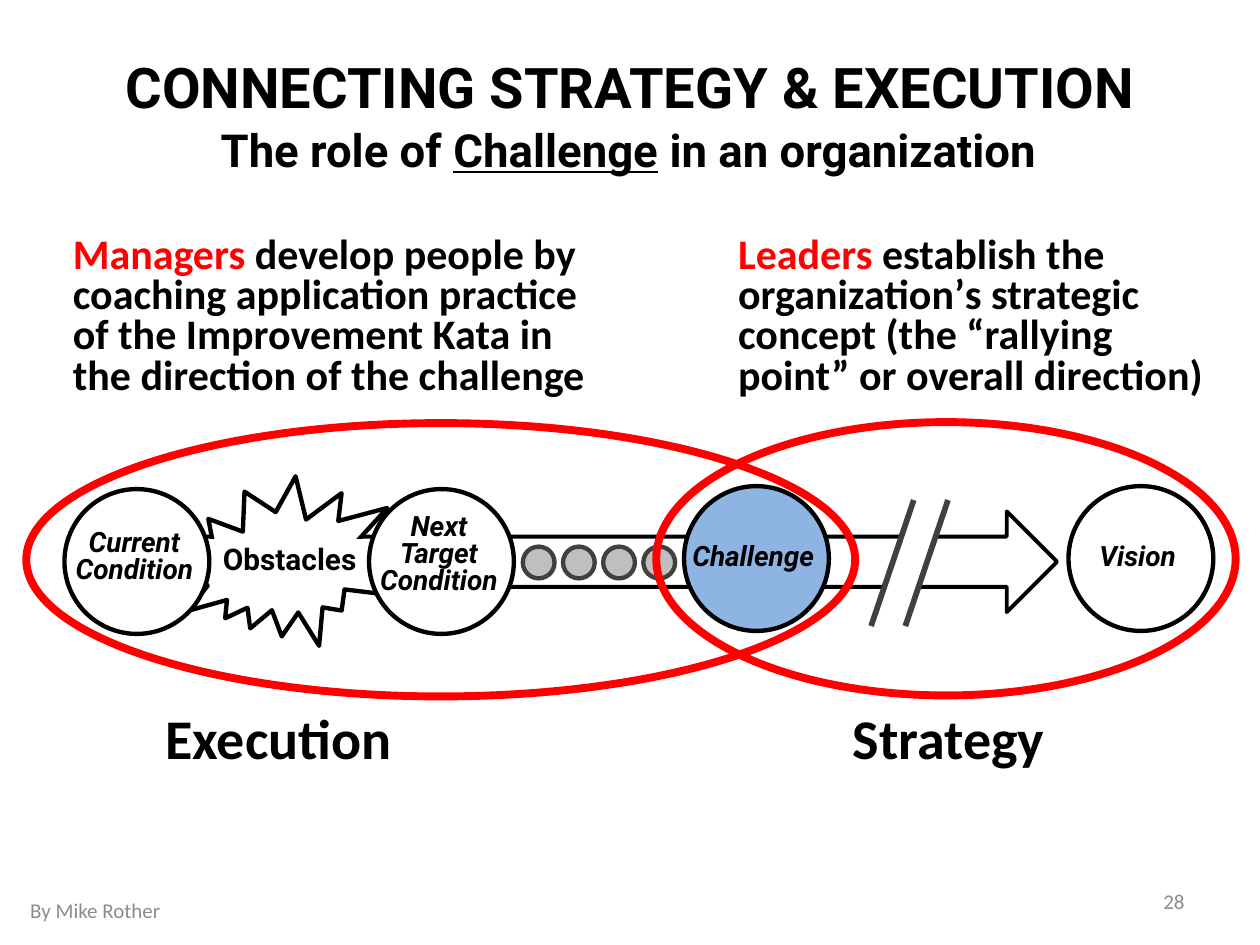
from dataclasses import dataclass

from lxml import etree
from pptx import Presentation
from pptx.dml.color import RGBColor
from pptx.enum.shapes import MSO_CONNECTOR, MSO_SHAPE
from pptx.enum.text import MSO_ANCHOR, MSO_AUTO_SIZE, PP_ALIGN
from pptx.oxml.ns import qn
from pptx.util import Cm, Pt

LEFT, MID, RIGHT = PP_ALIGN.LEFT, PP_ALIGN.CENTER, PP_ALIGN.RIGHT
TOP, CENTER = MSO_ANCHOR.TOP, MSO_ANCHOR.MIDDLE
OVAL, RECT = MSO_SHAPE.OVAL, MSO_SHAPE.RECTANGLE
ARROW, BURST = MSO_SHAPE.RIGHT_ARROW, MSO_SHAPE.EXPLOSION2
STRAIGHT = MSO_CONNECTOR.STRAIGHT


@dataclass(frozen=True)
class Theme:
    head: str = "Roboto"
    body: str = "Calibri"
    black: str = "000000"
    white: str = "FFFFFF"
    red: str = "FF0000"
    blue: str = "8EB4E3"
    gray: str = "BFBFBF"
    dark: str = "404040"
    pale: str = "8C8C8C"
    big: int = 32
    sub: int = 26
    text: int = 24
    tag: int = 17
    label: int = 16
    foot: int = 12
    thin: float = 2.25
    line: float = 2.5
    slash: float = 3.25
    ring: float = 4.5


T = Theme()


@dataclass(frozen=True)
class Box:
    x: float
    y: float
    w: float
    h: float


@dataclass(frozen=True)
class Style:
    font: str
    size: int
    color: str = T.black
    bold: bool = True
    italic: bool = False
    align: PP_ALIGN = MID
    anchor: MSO_ANCHOR = TOP
    space: float = 1.0
    wrap: bool = True


@dataclass(frozen=True)
class Stage:
    x: float
    y: float
    words: str
    label: Box
    fill: str = T.white


LABEL = Style(T.head, T.label, italic=True, space=0.8)
HEAD = Style(T.head, T.big, space=0.9)
SUB = Style(T.head, T.sub)
TAG = Style(T.head, T.tag, wrap=False)
NAME = Style(T.body, T.big)
NOTE = Style(T.body, T.text, align=LEFT, space=0.8)
FOOT = Style(T.body, T.foot, T.pale, bold=False, align=LEFT, anchor=CENTER)
PAGE = Style(T.body, T.foot, T.pale, bold=False, align=RIGHT, anchor=CENTER)

DISK = 2.92
VISION = Stage(21.54, 9.8, "Vision", Box(21.21, 10.87, 3.45, 0.84))
NEXT = Stage(7.44, 9.86, "Next\nTarget\nCondition", Box(7.26, 10.26, 3.18, 1.93))
NOW = Stage(1.3, 9.86, "Current\nCondition", Box(1.12, 10.59, 3.18, 1.37))
GOAL = Stage(13.79, 9.8, "Challenge", Box(13.46, 10.87, 3.45, 0.84), T.blue)


def place(box: Box) -> tuple:
    return Cm(box.x), Cm(box.y), Cm(box.w), Cm(box.h)


def write(frame, parts: list[str], style: Style) -> list:
    """Fill a frame with runs, breaking paragraphs at newlines; return the runs."""
    frame.word_wrap = style.wrap
    frame.auto_size = MSO_AUTO_SIZE.NONE
    frame.vertical_anchor = style.anchor
    frame.text = parts[0]
    for part in parts[1:]:
        frame.paragraphs[-1].add_run().text = part
    runs = []
    for par in frame.paragraphs:
        par.alignment = style.align
        par.line_spacing = style.space
        for run in par.runs:
            font = run.font
            font.name, font.size = style.font, Pt(style.size)
            font.bold, font.italic = style.bold, style.italic
            font.color.rgb = RGBColor.from_string(style.color)
            runs.append(run)
    return runs


def add_text(shapes, box: Box, style: Style, *parts: str) -> list:
    return write(shapes.add_textbox(*place(box)).text_frame, list(parts), style)


def add_form(shapes, kind, box: Box, fill: str = "", line: str = "",
             width: float = T.line, turn: float = 0):
    """Draw a preset shape; an empty fill or line colour means none."""
    form = shapes.add_shape(kind, *place(box))
    form.shadow.inherit = False
    form.rotation = turn
    if fill:
        form.fill.solid()
        form.fill.fore_color.rgb = RGBColor.from_string(fill)
    else:
        form.fill.background()
    if line:
        form.line.color.rgb = RGBColor.from_string(line)
        form.line.width = Pt(width)
    else:
        form.line.fill.background()


def add_stage(shapes, stage: Stage) -> None:
    add_form(shapes, OVAL, Box(stage.x, stage.y, DISK, DISK), stage.fill, T.black)
    add_text(shapes, stage.label, LABEL, stage.words)


def add_slash(shapes, x: float) -> None:
    line = shapes.add_connector(STRAIGHT, Cm(x), Cm(10.08), Cm(x - 0.86), Cm(12.62))
    line.line.color.rgb = RGBColor.from_string(T.dark)
    line.line.width = Pt(T.slash)
    etree.SubElement(line._element.spPr, qn("a:effectLst"))


def add_note(shapes, box: Box, who: str, words: str) -> None:
    runs = add_text(shapes, box, NOTE, who, words)
    runs[0].font.color.rgb = RGBColor.from_string(T.red)


def add_heads(shapes) -> None:
    title = shapes.title
    title.left, title.top, title.width, title.height = place(Box(1.04, 1.09, 23.34, 1.47))
    write(title.text_frame, ["CONNECTING STRATEGY & EXECUTION"], HEAD)
    runs = add_text(shapes, Box(1.8, 2.34, 21.74, 1.37), SUB,
                    "The role of ", "Challenge", " in an organization")
    runs[1].font.underline = True


def add_path(shapes) -> None:
    add_form(shapes, ARROW, Box(2.31, 10.31, 19, 2.03), T.white, T.black, T.thin)
    add_stage(shapes, VISION)
    add_form(shapes, RECT, Box(18.01, 10.41, 0.64, 1.91), T.white, turn=19)
    for x in (18.42, 19.11):
        add_slash(shapes, x)
    add_form(shapes, BURST, Box(4.01, 9.3, 3.84, 4.17), T.white, T.black, turn=39.9)
    add_form(shapes, RECT, Box(2.95, 10.87, 6.55, 0.89), T.white)
    add_stage(shapes, NEXT)
    add_stage(shapes, NOW)
    add_text(shapes, Box(4.14, 10.77, 3.4, 0.99), TAG, "Obstacles")
    add_stage(shapes, GOAL)
    for step in range(4):
        add_form(shapes, OVAL, Box(10.54 + 0.81 * step, 11.02, 0.64, 0.64), T.gray, T.dark)
    for ring in (Box(13.23, 8.51, 11.68, 5.51), Box(0.53, 8.53, 16.71, 5.51)):
        add_form(shapes, OVAL, ring, line=T.red, width=T.ring)


def add_notes(shapes) -> None:
    for x, name in ((1.93, "Execution"), (15.44, "Strategy")):
        add_text(shapes, Box(x, 14.05, 7.37, 1.63), NAME, name)
    add_note(shapes, Box(14.63, 4.65, 10.36, 3.58), "Leaders",
             " establish the organizationʼs strategic concept "
             "(the “rallying point” or overall direction)")
    add_note(shapes, Box(1.22, 4.65, 11.25, 3.58), "Managers",
             " develop people by coaching application practice of the "
             "Improvement Kata in the direction of the challenge")
    add_text(shapes, Box(0.36, 17.83, 8.05, 1.02), FOOT, "By Mike Rother")
    add_text(shapes, Box(18.21, 17.65, 5.92, 1.02), PAGE, "28")


def main() -> None:
    deck = Presentation()
    deck.slide_width, deck.slide_height = Cm(25.4), Cm(19.05)
    shapes = deck.slides.add_slide(deck.slide_layouts[5]).shapes
    add_heads(shapes)
    add_path(shapes)
    add_notes(shapes)
    deck.save("out.pptx")


if __name__ == "__main__":
    main()
